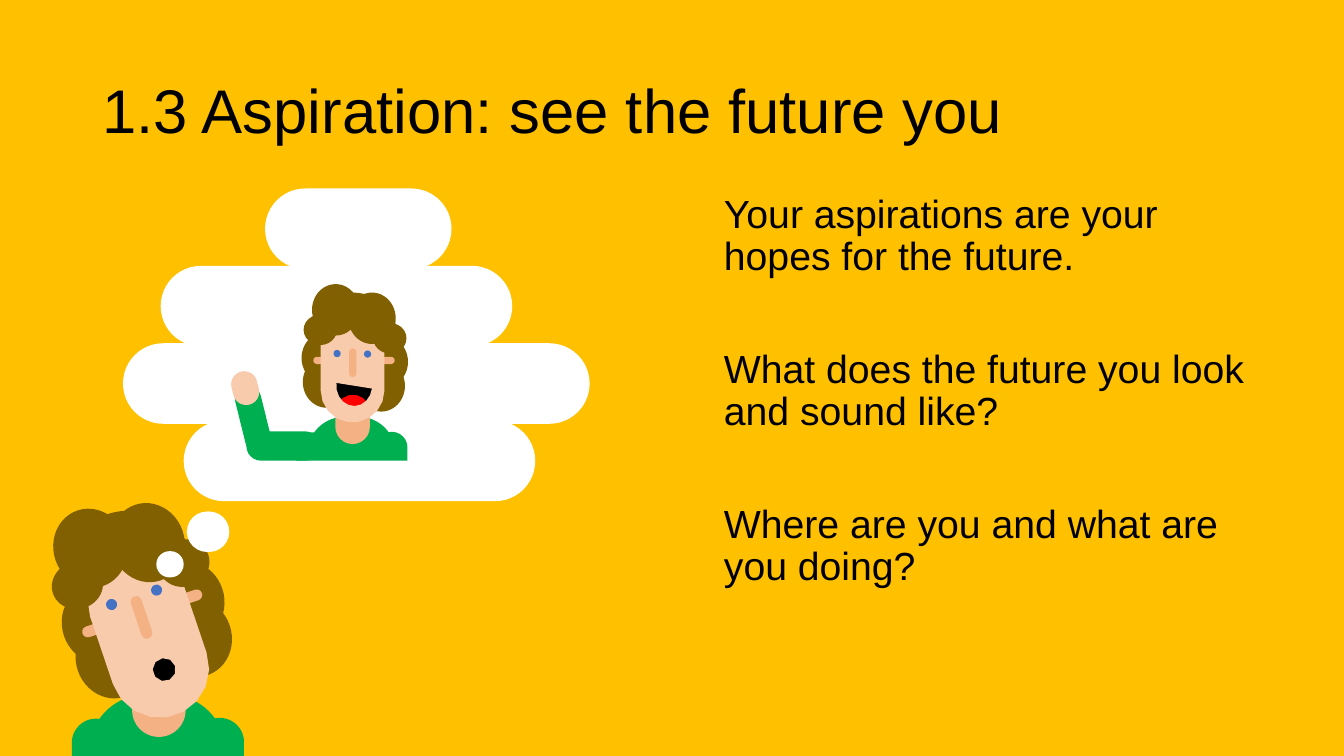
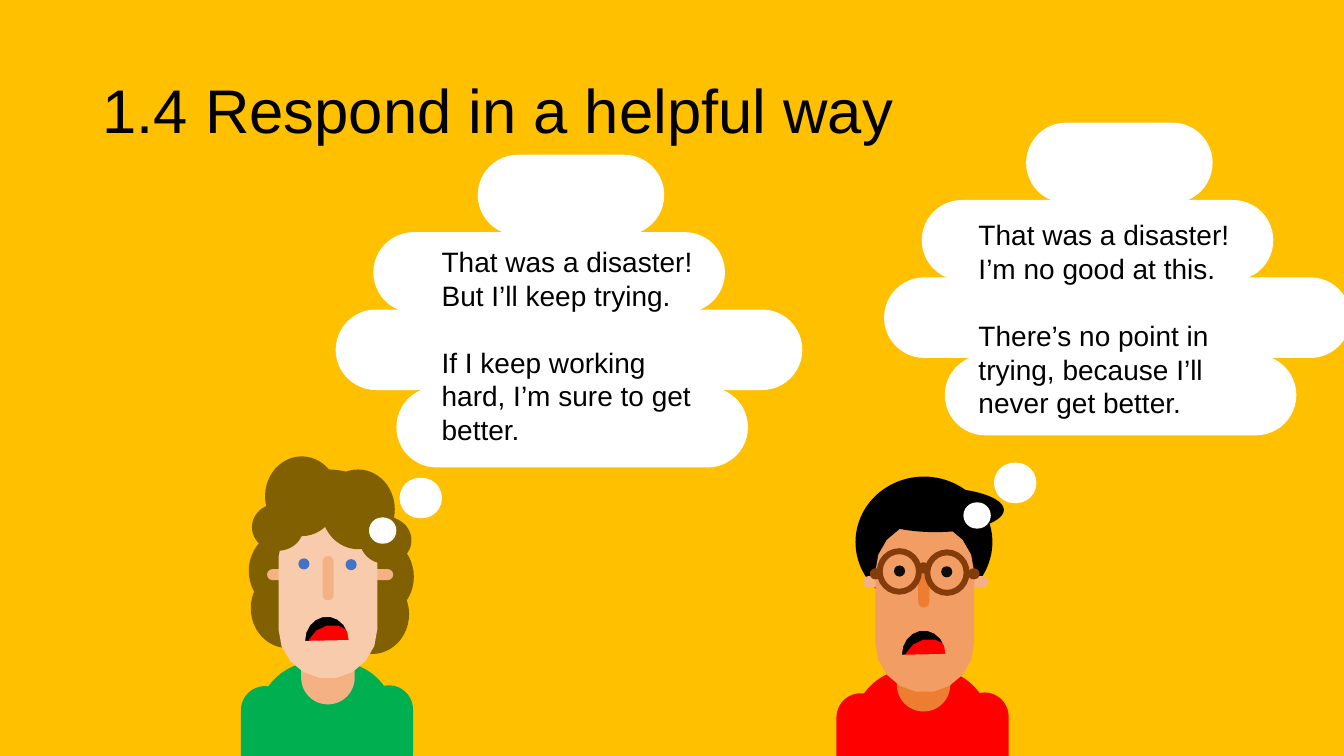
from math import cos, radians, sin

from lxml.etree import SubElement
from pptx import Presentation
from pptx.dml.color import RGBColor
from pptx.enum.shapes import MSO_SHAPE as Preset
from pptx.enum.text import MSO_ANCHOR as Anchor, MSO_AUTO_SIZE as AutoSize, PP_ALIGN as Align
from pptx.oxml.ns import qn
from pptx.util import Cm, Pt

COLORS = {
    "amber": "FFC000", "black": "000000", "white": "FFFFFF", "red": "FF0000",
    "green": "00B050", "brown": "806000", "blue": "4472C4", "pupil": "0D0D0D",
    "peach": "F8CBAD", "apricot": "F4B183", "tan": "F19D64", "orange": "ED7D31",
    "frame": "843C0B",
}
FONT = "Arial"
PILL, OVAL = Preset.ROUNDED_RECTANGLE, Preset.OVAL

# Slide content, positions and sizes in cm
TITLE_BOX = (2.33, 1.02, 29.2, 3.68)
QUESTIONS_BOX = (17.99, 4.78, 14.25, 12.09)
ASPIRATION_TITLE = "1.3 Aspiration: see the future you"
QUESTIONS = [
    "Your aspirations are your hopes for the future.",
    "What does the future you look and sound like?",
    "Where are you and what are you doing?",
]
RESPONSE_TITLE = "1.4 Respond in a helpful way"
HELPFUL = ["That was a disaster! But I’ll keep trying.",
           "If I keep working hard, I’m sure to get better."]
UNHELPFUL = ["That was a disaster! I’m no good at this.",
             "There’s no point in trying, because I’ll never get better."]

# Thought cloud, measured from its own corner: (left, width) of each row
CLOUD_ROWS = [(3.58, 4.7), (0.95, 8.86), (0, 11.76), (1.53, 8.86)]
ROW_STEP, ROW_HEIGHT = 1.95, 2.03
BUBBLES = [(1.61, 8.14, 1.07, 1.02), (0.84, 9.14, 0.69, 0.66)]

# Person, measured from the person's own corner
TORSO = [(0.43, 5.18, 3.45, 2.9), (0, 5.79, 1.22, 2.31), (3.12, 5.77, 1.22, 2.31)]
NECK = (1.52, 3.94, 1.35, 2.31)
NECK_JOINT = (2.49, 4.5)
EARS = (0.66, 2.84, 3.18, 0.28)
MOUTH_INSIDE = (1.32, 3.43, 1.93, 1.9)
FACE = (0.95, 1.31, 2.49, 4.29)
NOSE = (2.06, 2.51, 0.28, 1.12)
EYES = [(1.45, 2.57, 0.28, 0.28), (2.64, 2.59, 0.28, 0.28)]
CROWN = (0.48, 0.33, 3.45, 3.3)
CURL, WISP = (1.85, 2.01), (1.3, 1.19)
BACK_CURLS = [(x, y, *CURL) for x, y in [(2.39, 2.97), (0.25, 2.82), (0.2, 1.88), (2.51, 2.03)]]
FRONT_CURLS = [(0.28, 1.19, *WISP), (3, 1.52, *WISP), (0.61, 0, *CURL), (2.03, 0.33, *CURL)]
QUIFF = (0.77, 0.61, 3.45, 1.12)
LENSES = [(1.09, 2.21, 0.99, 1.02), (2.29, 2.24, 0.99, 1.02)]
HINGES = [(3.31, 2.64, 0.3, 0.28), (0.84, 2.64, 0.3, 0.28), (2.04, 2.49, 0.3, 0.28)]

# Arcs: centre x, centre y, radius x, radius y, start and end angle
MOUTHS = {
    "sad": {"opening": (2.17, 4.64, 0.55, 0.6, 179, 359),
            "tongue": (2.31, 4.88, 0.65, 0.63, 155, 385)},
    "happy": {"opening": (2.26, 4.17, 0.7, 0.79, 8, 188),
              "tongue": (2.21, 5.15, 0.65, 0.63, 155, 385)},
    "surprised": {"opening": (2.29, 4.42, 0.29, 0.29, 0, 360)},
}
CURLY = {"top": "green", "skin": "peach", "shade": "apricot", "eyes": "blue", "hair": "brown",
         "back": [*BACK_CURLS, CROWN], "front": FRONT_CURLS, "glasses": False}
SPECTACLED = {"top": "red", "skin": "tan", "shade": "orange", "eyes": "pupil", "hair": "black",
              "back": [CROWN], "front": [QUIFF], "glasses": True}

# Raised arm of the future self; the last value is the rotation
SHIRT_HEM = (5.13, 11.61, 7.34, 0.94)
ARM = [("green", (6.21, 10.87, 1.85, 0.74), 0),
       ("green", (6.05, 9.7, 0.66, 1.73), -13.9),
       ("peach", (5.85, 9.35, 0.66, 0.86), -13.9)]


def rgb(name):
    return RGBColor.from_string(COLORS[name])


def paint(shape, color):
    shape.shadow.inherit = False
    shape.fill.solid()
    shape.fill.fore_color.rgb = rgb(color)
    shape.line.fill.background()


def add_part(slide, preset, box, color, rotation=0):
    part = slide.shapes.add_shape(preset, *map(Cm, box))
    if preset == PILL:
        part.adjustments[0] = 0.5
    part.rotation = rotation
    paint(part, color)
    return part


def arc(center_x, center_y, radius_x, radius_y, start, end, steps=9):
    angles = [radians(start + (end - start) * i / steps) for i in range(steps + 1)]
    return [(center_x + radius_x * cos(a), center_y + radius_y * sin(a)) for a in angles]


def face_outline():
    left, top, width, height = FACE
    radius = width / 2
    middle = left + radius
    return (arc(middle, top + radius, radius, radius, 180, 360)
            + arc(middle, top + height - radius, radius, radius, 0, 180))


class Person:
    """Draws a person whose head may tilt about the neck joint."""

    def __init__(self, slide, look, mouth, at, scale=1, tilt=0, face_shift=(0, 0), eye_lift=0):
        self.slide, self.look, self.mouth = slide, look, MOUTHS[mouth]
        self.at, self.scale, self.tilt = at, scale, tilt
        self.face_shift, self.eye_lift = face_shift, eye_lift
        self.draw()

    def locate(self, x, y, tilt):
        joint_x, joint_y = NECK_JOINT
        turn, dx, dy = radians(tilt), x - joint_x, y - joint_y
        turned = (joint_x + dx * cos(turn) - dy * sin(turn),
                  joint_y + dx * sin(turn) + dy * cos(turn))
        return [start + self.scale * value for start, value in zip(self.at, turned)]

    def body(self, preset, box, color, tilt=0):
        x, y, width, height = box
        middle_x, middle_y = self.locate(x + width / 2, y + height / 2, tilt)
        width, height = width * self.scale, height * self.scale
        placed = (middle_x - width / 2, middle_y - height / 2, width, height)
        return add_part(self.slide, preset, placed, color, tilt)

    def head(self, preset, boxes, color):
        return [self.body(preset, box, color, self.tilt) for box in boxes]

    def outline(self, contours, color):
        """Fill contours on the face; a second contour cuts a hole."""
        shift_x, shift_y = self.face_shift
        placed = [[tuple(map(Cm, self.locate(x + shift_x, y + shift_y, self.tilt)))
                   for x, y in contour] for contour in contours]
        builder = self.slide.shapes.build_freeform(*placed[0][0])
        for i, contour in enumerate(placed):
            if i:
                builder.move_to(*contour[0])
            builder.add_line_segments(contour[1:], close=True)
        paint(builder.convert_to_shape(), color)

    def draw(self):
        look = self.look
        for box in TORSO:
            self.body(PILL, box, look["top"])
        self.body(PILL, NECK, look["shade"])
        self.head(OVAL, look["back"], look["hair"])
        self.head(PILL, [EARS], "apricot")
        self.head(OVAL, [MOUTH_INSIDE], "black")
        if "tongue" in self.mouth:
            self.outline([arc(*self.mouth["tongue"])], "red")
        self.outline([face_outline(), arc(*self.mouth["opening"])[::-1]], look["skin"])
        self.head(PILL, [NOSE], look["shade"])
        eyes = [(x, y - self.eye_lift, width, height) for x, y, width, height in EYES]
        self.head(PILL, eyes, look["eyes"])
        self.head(OVAL, look["front"], look["hair"])
        if look["glasses"]:
            for lens in self.head(OVAL, LENSES, "frame"):
                lens.fill.background()
                lens.line.color.rgb = rgb("frame")
                lens.line.width = Pt(4.25)
            self.head(PILL, HINGES, "frame")


def add_cloud(slide, x, y, bubble_shift=(0, 0)):
    for i, (left, width) in enumerate(CLOUD_ROWS):
        add_part(slide, PILL, (x + left, y + i * ROW_STEP, width, ROW_HEIGHT), "white")
    shift_x, shift_y = bubble_shift
    for left, top, width, height in BUBBLES:
        add_part(slide, PILL, (x + left + shift_x, y + top + shift_y, width, height), "white")


def set_box(shape, box):
    shape.left, shape.top, shape.width, shape.height = map(Cm, box)


def write(frame, lines, size, gap=0, line_spacing=None):
    frame.word_wrap = True
    frame.text = "\n".join(lines)
    for i, paragraph in enumerate(frame.paragraphs):
        paragraph.alignment = Align.LEFT
        paragraph.line_spacing = line_spacing
        paragraph.space_before = Pt(gap if i else 0)
        for run in paragraph.runs:
            run.font.name, run.font.size = FONT, Pt(size)
            run.font.color.rgb = rgb("black")


def add_slide(deck, layout, title):
    slide = deck.slides.add_slide(deck.slide_layouts[layout])
    slide.background.fill.solid()
    slide.background.fill.fore_color.rgb = rgb("amber")
    heading = slide.shapes.title
    set_box(heading, TITLE_BOX)
    heading.text_frame.auto_size = AutoSize.NONE
    heading.text_frame.vertical_anchor = Anchor.MIDDLE
    write(heading.text_frame, [title], 44, line_spacing=0.9)
    return slide


def add_questions(slide):
    body = slide.placeholders[1]
    set_box(body, QUESTIONS_BOX)
    body.text_frame.auto_size = AutoSize.NONE
    write(body.text_frame, QUESTIONS, 28, gap=50.2, line_spacing=0.9)
    for paragraph in body.text_frame.paragraphs:
        properties = paragraph._p.get_or_add_pPr()
        properties.set("marL", "0")
        properties.set("indent", "0")
        SubElement(properties, qn("a:buNone"))


def add_thought(slide, lines, box):
    frame = slide.shapes.add_textbox(*map(Cm, box)).text_frame
    frame.margin_left = frame.margin_right = frame.margin_top = frame.margin_bottom = Cm(0.13)
    frame.auto_size = AutoSize.SHAPE_TO_FIT_TEXT
    write(frame, lines, 20, gap=24)


def add_aspiration(deck):
    slide = add_slide(deck, 1, ASPIRATION_TITLE)
    add_questions(slide)
    Person(slide, CURLY, "surprised", (1.81, 12.32), tilt=-18.7,
           face_shift=(0.03, 0.08), eye_lift=0.19)
    add_cloud(slide, 3.1, 4.75)
    Person(slide, CURLY, "happy", (7.47, 7.16), scale=0.645, face_shift=(0, -0.2))
    add_part(slide, PILL, SHIRT_HEM, "white")
    for color, box, rotation in ARM:
        add_part(slide, PILL, box, color, rotation)


def add_response(deck):
    slide = add_slide(deck, 5, RESPONSE_TITLE)
    Person(slide, CURLY, "sad", (6.07, 11.5))
    Person(slide, SPECTACLED, "sad", (21.08, 11.68), face_shift=(0.03, 0.17))
    add_cloud(slide, 8.46, 3.9)
    add_cloud(slide, 22.28, 3.09, bubble_shift=(1.16, 0.43))
    add_thought(slide, HELPFUL, (11, 6.03, 6.83, 5.11))
    add_thought(slide, UNHELPFUL, (24.53, 5.36, 7.26, 5.11))


def main():
    deck = Presentation()
    deck.slide_width, deck.slide_height = Cm(33.87), Cm(19.05)
    add_aspiration(deck)
    add_response(deck)
    deck.save("out.pptx")


if __name__ == "__main__":
    main()
